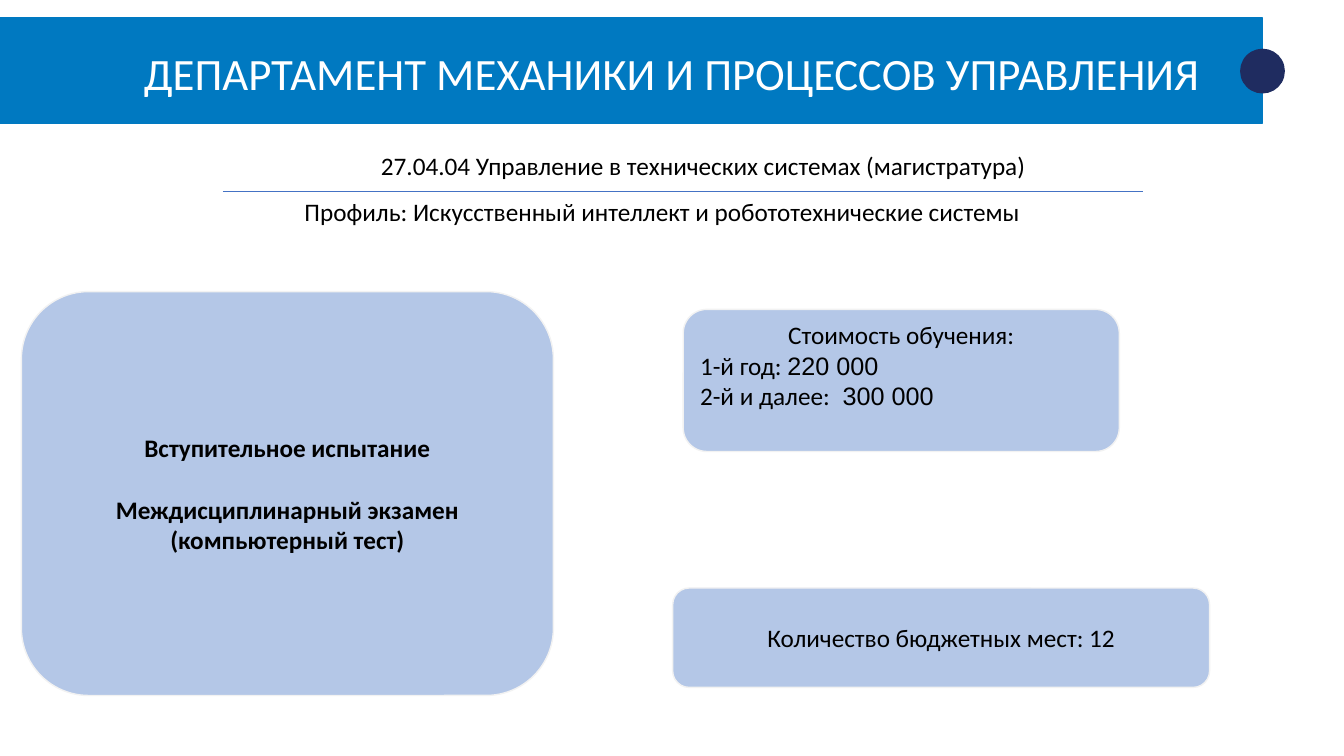
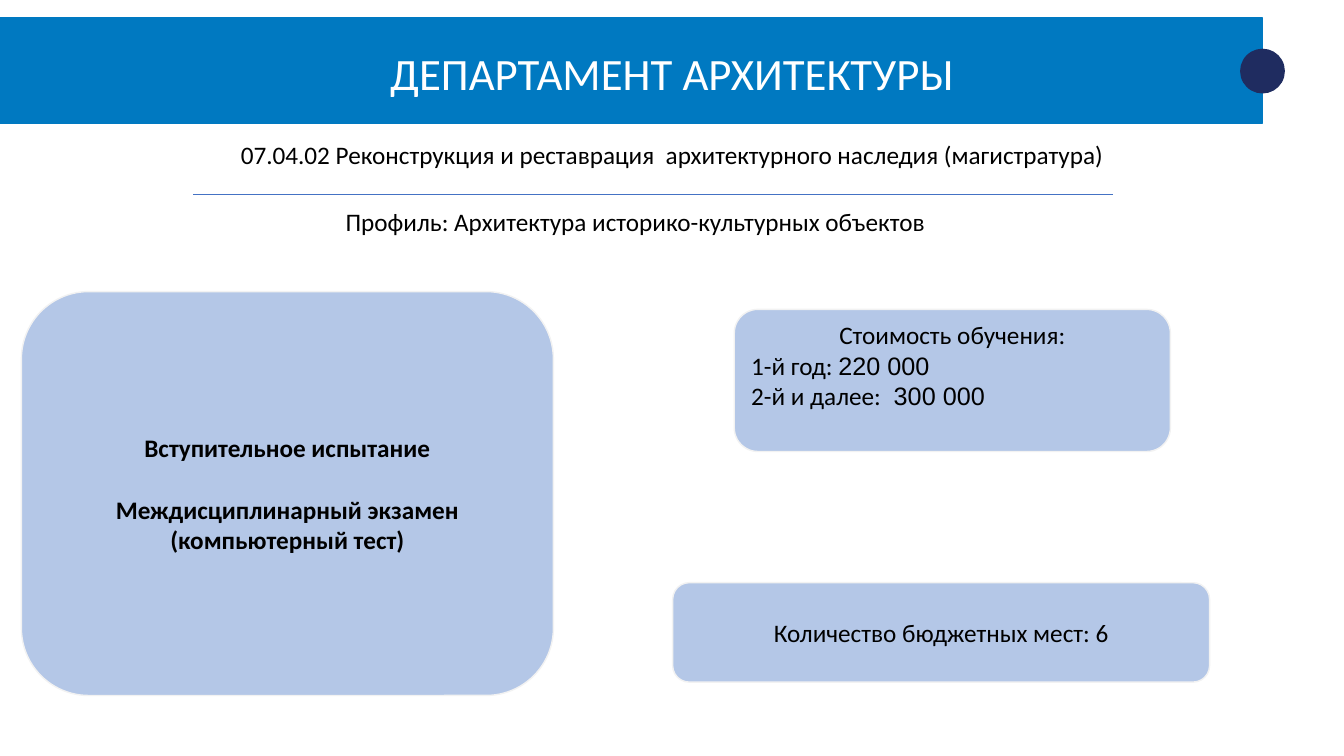
"""Build the admission slides for two master's programmes."""
from dataclasses import dataclass

import lxml.etree
import pptx
import pptx.dml.color
import pptx.enum.shapes
import pptx.enum.text
import pptx.oxml.ns
import pptx.util

Pt = pptx.util.Pt
Align = pptx.enum.text.PP_ALIGN
Anchor = pptx.enum.text.MSO_ANCHOR
Preset = pptx.enum.shapes.MSO_SHAPE


@dataclass(frozen=True)
class Theme:
    band: str = "0079C1"
    dot: str = "1F2C60"
    card: str = "B4C7E7"
    card_edge: str = "F2F2F2"
    rule: str = "4472C4"
    ink: str = "000000"
    inverse: str = "FFFFFF"
    font: str = "Calibri"
    figure_font: str = "Arial"
    title_size: float = 32
    body_size: float = 18


@dataclass(frozen=True)
class Box:
    left: float
    top: float
    width: float
    height: float

    def lengths(self) -> tuple:
        return tuple(Pt(v) for v in (self.left, self.top, self.width, self.height))


@dataclass(frozen=True)
class Line:
    text: str
    figure: str = ""
    align: Align = Align.CENTER
    size: float = Theme.body_size
    color: str = Theme.ink
    bold: bool = False
    spacing: float = 1.0
    after: float = 0


@dataclass(frozen=True)
class Programme:
    department: str
    degree: Line
    degree_box: Box
    profile: Line
    profile_box: Box
    rule_left: float
    rule_top: float
    cost_left: float
    places: int
    places_top: float


THEME = Theme()
BAND = Box(0, 13, 902, 75)
TITLE = Box(66.2, 2.2, 828, 104.4)
DOT = Box(886.3, 35.3, 31, 31)
EXAM = Box(15.3, 208.3, 380, 288.5)
RULE_WIDTH = 657
COST_TOP, COST_WIDTH, COST_HEIGHT = 221, 311.5, 101.5
PLACES_LEFT, PLACES_WIDTH, PLACES_HEIGHT = 480.5, 383.5, 71
LINE_HEIGHT = 22

EXAM_LINES = [
    Line("Вступительное испытание", bold=True, after=LINE_HEIGHT),
    Line("Междисциплинарный экзамен", bold=True),
    Line("(компьютерный тест)", bold=True),
]
COST_LINES = [
    Line("Стоимость обучения:"),
    Line("1-й год: ", "220 000", Align.LEFT),
    Line("2-й и далее: ", " 300 000", Align.LEFT),
]
PROGRAMMES = [
    Programme(
        "ДЕПАРТАМЕНТ МЕХАНИКИ И ПРОЦЕССОВ УПРАВЛЕНИЯ",
        Line("27.04.04 Управление в технических системах (магистратура)", spacing=1.1),
        Box(143, 101.5, 718.5, 57),
        Line("Профиль: Искусственный интеллект и робототехнические системы"),
        Box(28.5, 136.8, 889, 53),
        159.3, 136.8, 488, 12, 420,
    ),
    Programme(
        "ДЕПАРТАМЕНТ АРХИТЕКТУРЫ",
        Line("07.04.02 Реконструкция и реставрация  архитектурного наследия (магистратура)",
             align=Align.JUSTIFY, spacing=0.9, after=8),
        Box(164.9, 98.6, 780, 60.5),
        Line("Профиль: Архитектура историко-культурных объектов",
             align=Align.JUSTIFY, spacing=0.9, after=8),
        Box(239.8, 146.2, 700, 59),
        138.2, 139, 524.5, 6, 416.2,
    ),
]


def rgb(color: str) -> pptx.dml.color.RGBColor:
    return pptx.dml.color.RGBColor.from_string(color)


def write(frame, lines: list[Line], anchor: Anchor = Anchor.MIDDLE) -> None:
    frame.word_wrap = True
    frame.vertical_anchor = anchor
    frame.text = "\n".join(line.text for line in lines)
    for paragraph, line in zip(frame.paragraphs, lines):
        paragraph.alignment = line.align
        paragraph.line_spacing = line.spacing
        paragraph.space_after = Pt(line.after)
        if line.figure:
            paragraph.add_run().text = line.figure
        for run, face in zip(paragraph.runs, (THEME.font, THEME.figure_font)):
            run.font.name = face
            run.font.size = Pt(line.size)
            run.font.bold = line.bold
            run.font.color.rgb = rgb(line.color)


def add_label(slide, box: Box, line: Line, anchor: Anchor = Anchor.TOP) -> None:
    write(slide.shapes.add_textbox(*box.lengths()).text_frame, [line], anchor)


def add_panel(slide, preset: Preset, box: Box, fill: str, edge: str):
    panel = slide.shapes.add_shape(preset, *box.lengths())
    panel.shadow.inherit = False
    panel.fill.solid()
    panel.fill.fore_color.rgb = rgb(fill)
    panel.line.color.rgb = rgb(edge)
    panel.line.width = Pt(1)
    return panel


def add_card(slide, box: Box, lines: list[Line]):
    card = add_panel(slide, Preset.ROUNDED_RECTANGLE, box, THEME.card, THEME.card_edge)
    write(card.text_frame, lines)
    return card


def add_rule(slide, left: float, top: float) -> None:
    rule = slide.shapes.add_connector(
        pptx.enum.shapes.MSO_CONNECTOR.STRAIGHT,
        Pt(left), Pt(top), Pt(left + RULE_WIDTH), Pt(top))
    rule.line.color.rgb = rgb(THEME.rule)
    rule.line.width = Pt(0.5)
    lxml.etree.SubElement(rule._element.spPr, pptx.oxml.ns.qn("a:effectLst"))


def add_programme(deck, programme: Programme) -> None:
    slide = deck.slides.add_slide(deck.slide_layouts[6])
    add_panel(slide, Preset.RECTANGLE, BAND, THEME.band, THEME.band)
    heading = Line(programme.department, size=THEME.title_size,
                   color=THEME.inverse, spacing=0.9)
    add_label(slide, TITLE, heading, Anchor.MIDDLE)
    add_label(slide, programme.degree_box, programme.degree)
    add_label(slide, programme.profile_box, programme.profile)
    add_rule(slide, programme.rule_left, programme.rule_top)
    add_card(slide, EXAM, EXAM_LINES)
    add_panel(slide, Preset.OVAL, DOT, THEME.dot, THEME.dot)
    places_box = Box(PLACES_LEFT, programme.places_top, PLACES_WIDTH, PLACES_HEIGHT)
    add_card(slide, places_box, [Line(f"Количество бюджетных мест: {programme.places}")])
    cost_box = Box(programme.cost_left, COST_TOP, COST_WIDTH, COST_HEIGHT)
    cost = add_card(slide, cost_box, COST_LINES)
    cost.text_frame.margin_bottom = Pt(3.6 + LINE_HEIGHT)


def main() -> None:
    deck = pptx.Presentation()
    deck.slide_width, deck.slide_height = Pt(960), Pt(540)
    for programme in PROGRAMMES:
        add_programme(deck, programme)
    deck.save("out.pptx")


if __name__ == "__main__":
    main()
